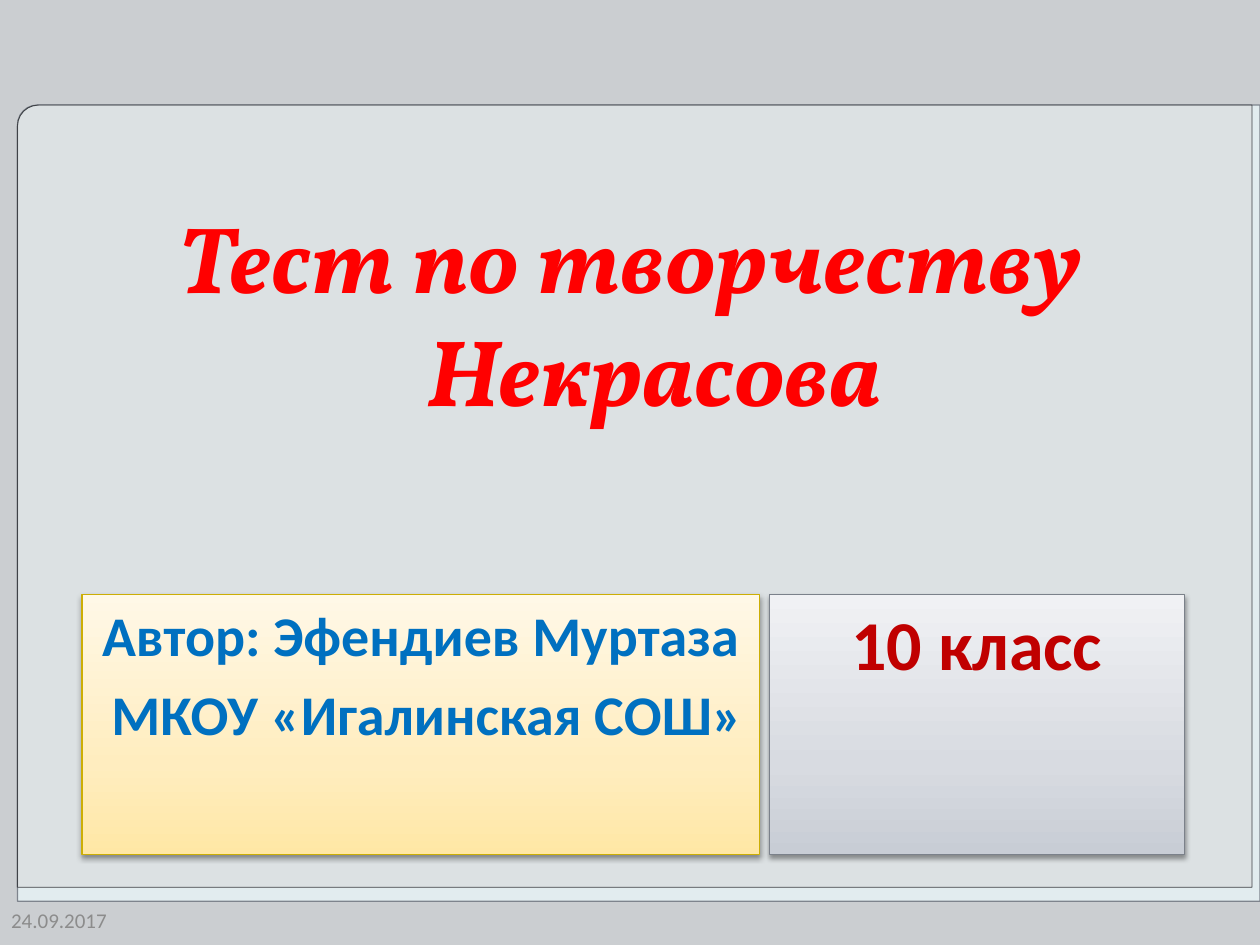
from copy import deepcopy

from lxml.etree import SubElement
from pptx import Presentation
from pptx.dml.color import RGBColor
from pptx.enum.shapes import MSO_SHAPE
from pptx.enum.text import MSO_ANCHOR, PP_ALIGN
from pptx.oxml.ns import qn
from pptx.util import Pt


def color(value):
    return RGBColor.from_string(value)


def write(shape, lines, font, size, text_color, italic=False):
    """Fill a shape with bold centred lines from the top."""
    frame = shape.text_frame
    frame.word_wrap = True
    frame.vertical_anchor = MSO_ANCHOR.TOP
    for number, line in enumerate(lines):
        paragraph = frame.paragraphs[0] if number == 0 else frame.add_paragraph()
        paragraph.alignment = PP_ALIGN.CENTER
        paragraph.space_before = Pt(size * 0.2)
        properties = paragraph._p.get_or_add_pPr()
        properties.set("marL", str(Pt(27)))
        properties.set("indent", str(Pt(-27)))
        run = paragraph.add_run()
        run.text = line
        run.font.name = font
        run.font.size = Pt(size)
        run.font.bold = True
        run.font.italic = italic
        run.font.color.rgb = color(text_color)


presentation = Presentation()
presentation.slide_width = Pt(720)
presentation.slide_height = Pt(540)
slide = presentation.slides.add_slide(presentation.slide_layouts[6])
slide.background.fill.solid()
slide.background.fill.fore_color.rgb = color("CBCED1")

# Two overlapping sheets, each rounded at the top left
sheets = [
    (710, 455, 0.025, "E2ECEF", 100, "7E848D", 0.75),
    (705.5, 447, 0.027, "D8D8D8", 50, "3F4247", 0.5),
]
for width, height, rounding, fill, opacity, line, line_width in sheets:
    sheet = slide.shapes.add_shape(
        MSO_SHAPE.ROUND_1_RECTANGLE, Pt(10), Pt(60), Pt(width), Pt(height))
    sheet.shadow.inherit = False
    sheet.adjustments[0] = rounding
    sheet._element.spPr.find(qn("a:xfrm")).set("flipH", "1")
    sheet.fill.solid()
    sheet.fill.fore_color.rgb = color(fill)
    fill_color = sheet._element.spPr.find(qn("a:solidFill"))[0]
    SubElement(fill_color, qn("a:alpha"), val=str(opacity * 1000))
    sheet.line.color.rgb = color(line)
    sheet.line.width = Pt(line_width)

# Date
date = slide.shapes.add_textbox(Pt(-0.7), Pt(511.2), Pt(84.2), Pt(28.8))
date.text_frame.word_wrap = True
date.text_frame.vertical_anchor = MSO_ANCHOR.MIDDLE
run = date.text_frame.paragraphs[0].add_run()
run.text = "24.09.2017"
run.font.name = "Calibri"
run.font.size = Pt(12)
run.font.color.rgb = color("8C8C8C")

# Title
title = slide.shapes.add_textbox(Pt(48.2), Pt(110.2), Pt(624.2), Pt(219.6))
write(title, ["Тест по творчеству Некрасова"], "Vollkorn", 54, "FF0000", italic=True)

# Author and class cards
cards = [
    (46.8, 387.4, ["FFE7A5", "FFEDBF", "FFF8E7"], "CCAE05",
     ["Автор: Эфендиев Муртаза", " МКОУ «Игалинская СОШ»"], 32, "0070C0"),
    (439.6, 237.2, ["C8CDD5", "D8DBE1", "F0F1F4"], "7B818A",
     ["10 класс"], 40, "C00000"),
]
for left, width, gradient, line, lines, size, text_color in cards:
    card = slide.shapes.add_shape(
        MSO_SHAPE.RECTANGLE, Pt(left), Pt(339.8), Pt(width), Pt(148.6))
    card.fill.gradient()
    card.fill.gradient_angle = 90
    stop_list = card._element.spPr.find(qn("a:gradFill")).find(qn("a:gsLst"))
    stop_list.insert(1, deepcopy(stop_list[0]))
    for stop, position, stop_color in zip(card.fill.gradient_stops, (0, 0.35, 1), gradient):
        stop.position = position
        stop.color.rgb = color(stop_color)
    card.line.color.rgb = color(line)
    card.line.width = Pt(0.75)

    card.shadow.inherit = False
    effects = card._element.spPr.find(qn("a:effectLst"))
    shadow = SubElement(effects, qn("a:outerShdw"), blurRad=str(Pt(3.1)),
                        dist=str(Pt(1.6)), dir="5400000", rotWithShape="0")
    shadow_color = SubElement(shadow, qn("a:srgbClr"), val="000000")
    SubElement(shadow_color, qn("a:alpha"), val="38000")

    write(card, lines, "Calibri", size, text_color)

presentation.save("out.pptx")
